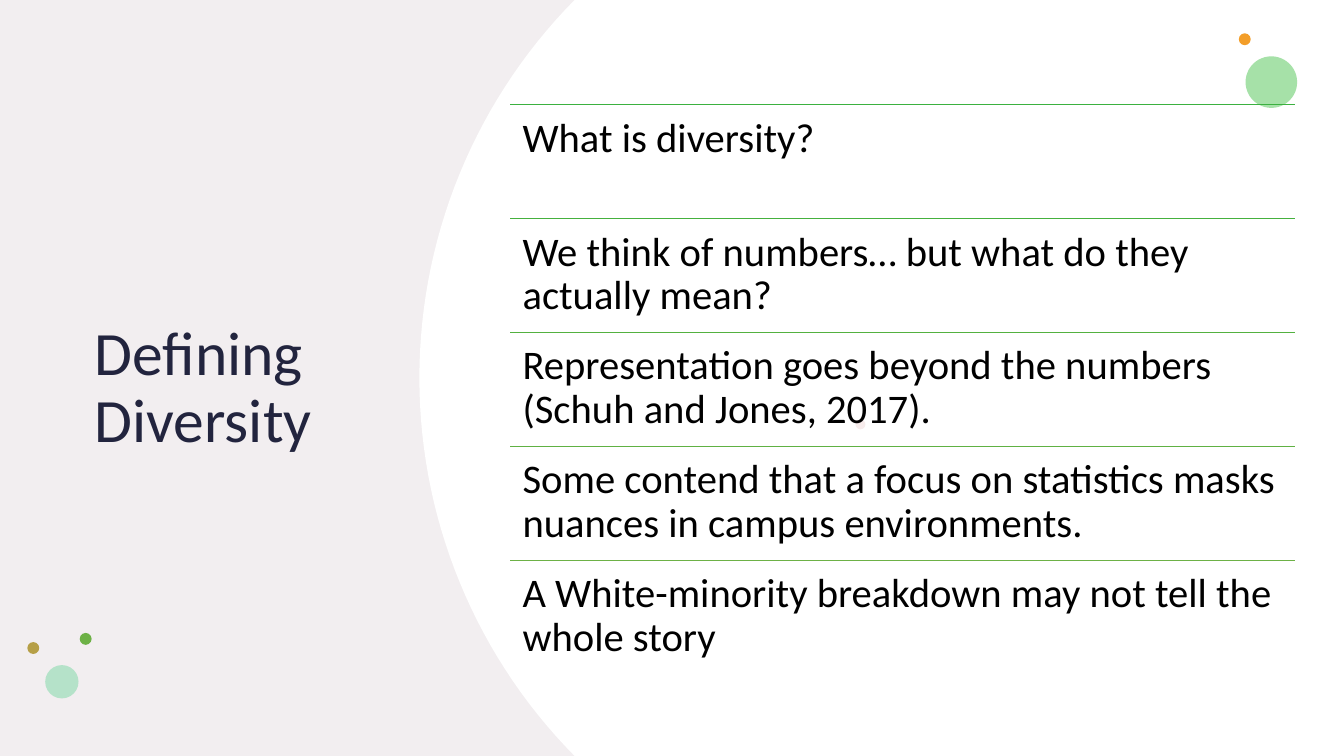
"""Build the "Defining Diversity" slide with a ruled list beside a curved panel."""
import math

import pptx
import pptx.dml.color
import pptx.enum.shapes
import pptx.enum.text
import pptx.oxml.ns
import pptx.util
from lxml import etree

Cm = pptx.util.Cm
Pt = pptx.util.Pt
qn = pptx.oxml.ns.qn
MSO_SHAPE = pptx.enum.shapes.MSO_SHAPE


def color(hex_string):
    return pptx.dml.color.RGBColor.from_string(hex_string)


def paint(shape, hex_string, opacity=100):
    shape.shadow.inherit = False
    shape.line.fill.background()
    shape.fill.solid()
    shape.fill.fore_color.rgb = color(hex_string)
    if opacity < 100:
        fill_color = shape._element.spPr.find(".//" + qn("a:srgbClr"))
        etree.SubElement(fill_color, qn("a:alpha"), val=str(opacity * 1000))


WIDTH, HEIGHT = 33.87, 19.05
presentation = pptx.Presentation()
presentation.slide_width = Cm(WIDTH)
presentation.slide_height = Cm(HEIGHT)
slide = presentation.slides.add_slide(presentation.slide_layouts[5])
shapes = slide.shapes

tint = shapes.add_shape(MSO_SHAPE.RECTANGLE, 0, 0, Cm(WIDTH), Cm(HEIGHT))
paint(tint, "D4C8CE", 30)

RADIUS, PANEL_LEFT, ARC_STEPS = 13.55, 10.57, 60
half_angle = math.asin(HEIGHT / 2 / RADIUS)
arc = []
for step in range(ARC_STEPS + 1):
    angle = half_angle * (1 - 2 * step / ARC_STEPS)
    arc.append((Cm(PANEL_LEFT + RADIUS * (1 - math.cos(angle))),
                Cm(HEIGHT / 2 + RADIUS * math.sin(angle))))
builder = shapes.build_freeform(Cm(WIDTH), 0)
builder.add_line_segments([(Cm(WIDTH), Cm(HEIGHT))] + arc, close=True)
paint(builder.convert_to_shape(), "FFFFFF")

dots = [
    (31.39, 1.42, 1.3, "84D687", 72),
    (31.22, 0.84, 0.3, "F39E29", 100),
    (21.56, 10.57, 0.25, "E3BEBE", 28),
    (2.01, 15.95, 0.3, "6DB146", 100),
    (1.14, 16.76, 0.84, "B5E2C9", 100),
    (0.69, 16.18, 0.3, "B69F47", 100),
]
for left, top, diameter, fill, opacity in dots:
    dot = shapes.add_shape(MSO_SHAPE.OVAL, Cm(left), Cm(top), Cm(diameter), Cm(diameter))
    paint(dot, fill, opacity)

title = shapes.title
shapes._spTree.append(title._element)
title.left, title.top, title.width, title.height = Cm(2.13), Cm(2.64), Cm(7.95), Cm(14.33)
frame = title.text_frame
frame.word_wrap = True
frame.auto_size = pptx.enum.text.MSO_AUTO_SIZE.NONE
frame.vertical_anchor = pptx.enum.text.MSO_ANCHOR.MIDDLE
paragraph = frame.paragraphs[0]
paragraph.alignment = pptx.enum.text.PP_ALIGN.LEFT
paragraph.line_spacing = 0.9
run = paragraph.add_run()
run.text = "Defining Diversity"
run.font.name = "Calibri"
run.font.size = Pt(44)
run.font.color.rgb = color("22243E")

LIST_LEFT, LIST_TOP, LIST_WIDTH, ROW_HEIGHT, INSET = 12.86, 2.64, 19.78, 2.87, 0.31
points = [
    ("What is diversity?", "3BB140"),
    ("We think of numbers… but what do they actually mean?", "45B13E"),
    ("Representation goes beyond the numbers (Schuh and Jones, 2017).", "53B140"),
    ("Some contend that a focus on statistics masks nuances in campus environments.", "60B143"),
    ("A White-minority breakdown may not tell the whole story", "6DB146"),
]
for row, (text, rule_color) in enumerate(points):
    top = Cm(LIST_TOP + row * ROW_HEIGHT)
    rule = shapes.add_connector(pptx.enum.shapes.MSO_CONNECTOR.STRAIGHT,
                                Cm(LIST_LEFT), top, Cm(LIST_LEFT + LIST_WIDTH), top)
    rule.line.color.rgb = color(rule_color)
    rule.line.width = Pt(1)
    etree.SubElement(rule._element.spPr, qn("a:effectLst"))

    box = shapes.add_textbox(Cm(LIST_LEFT), top, Cm(LIST_WIDTH), Cm(ROW_HEIGHT))
    frame = box.text_frame
    frame.word_wrap = True
    frame.margin_left = frame.margin_right = Cm(INSET)
    frame.margin_top = frame.margin_bottom = Cm(INSET)
    paragraph = frame.paragraphs[0]
    paragraph.line_spacing = 0.9
    run = paragraph.add_run()
    run.text = text
    run.font.name = "Calibri"
    run.font.size = Pt(29)
    run.font.color.rgb = color("000000")

presentation.save("out.pptx")
